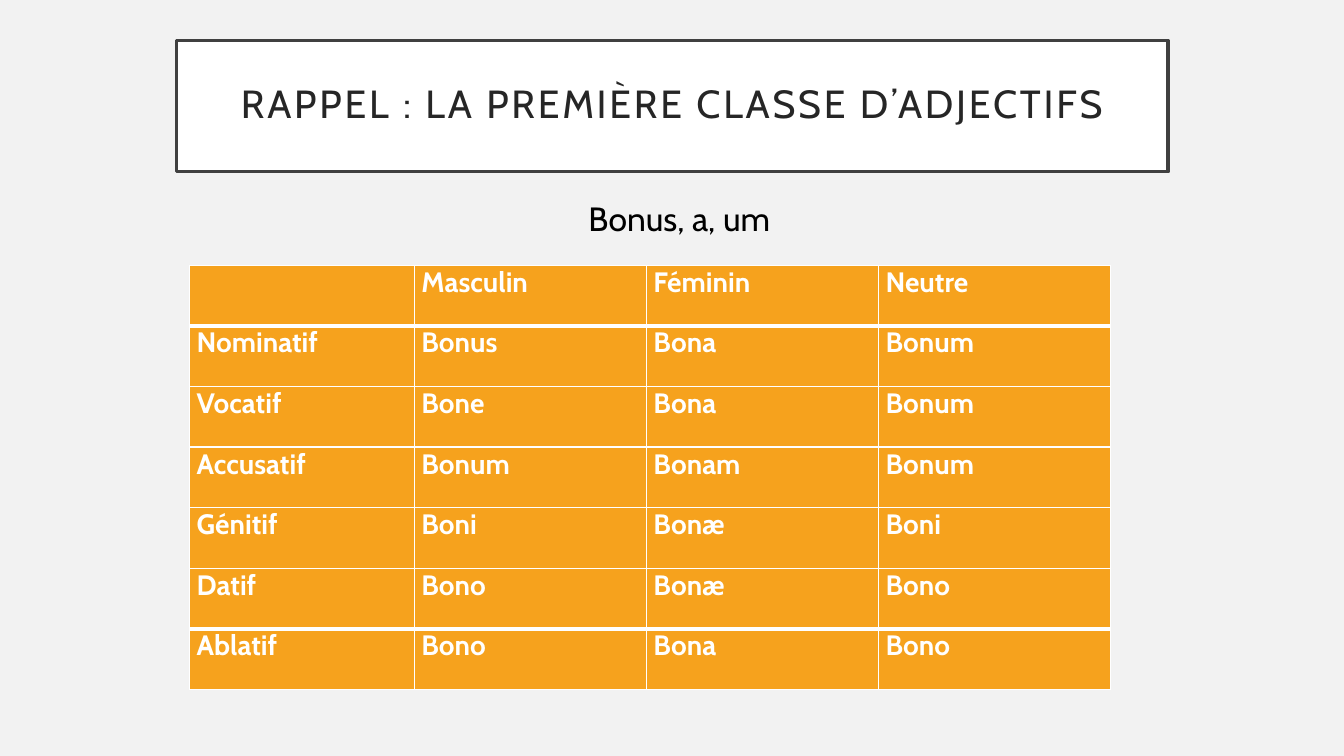
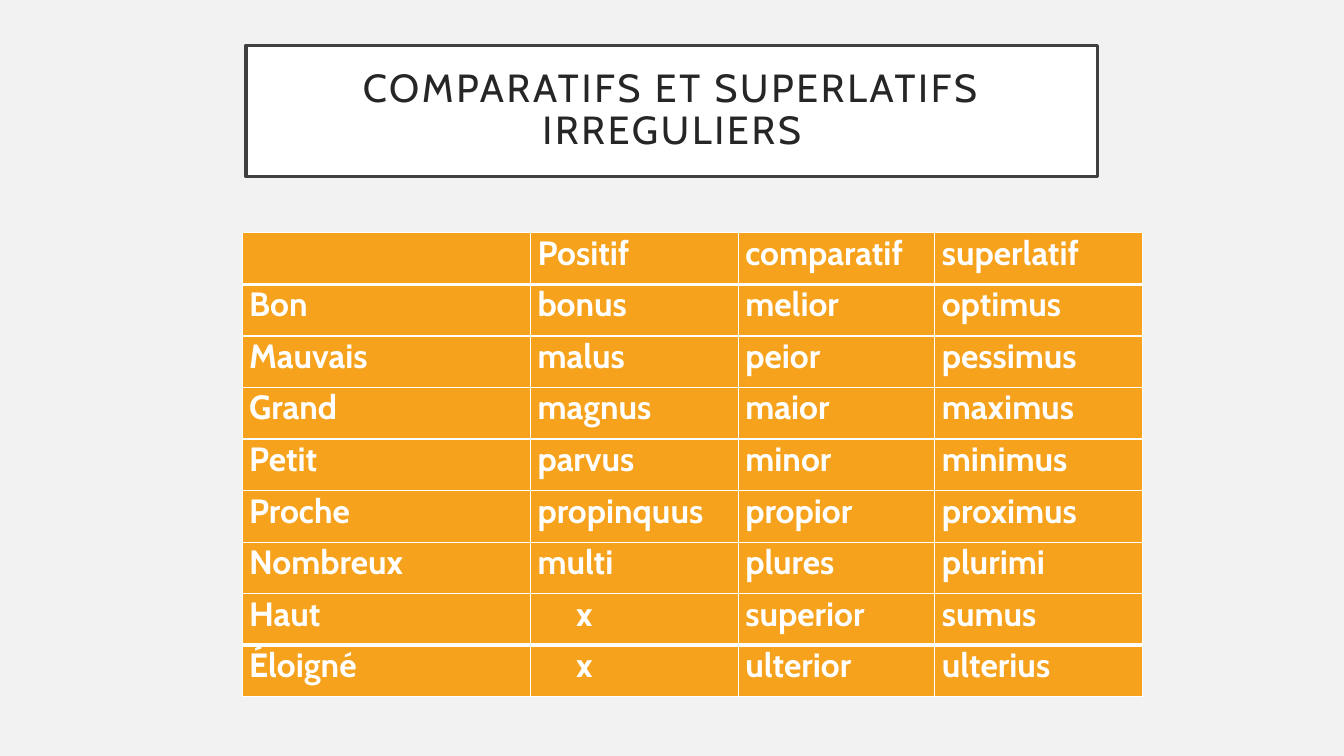
from lxml.etree import SubElement
from pptx import Presentation
from pptx.dml.color import RGBColor
from pptx.enum.text import MSO_ANCHOR, MSO_AUTO_SIZE, PP_ALIGN
from pptx.oxml.ns import qn
from pptx.util import Pt

FONT = "Cabin"
PAGE, WHITE, BLACK = "F2F2F2", "FFFFFF", "000000"
FRAME, TITLE, ORANGE = "404040", "262626", "F6A21D"
CELL_INSET = 5
X_INSET = 32.5

ADJECTIVES = [
    ["", "Masculin", "Féminin", "Neutre"],
    ["Nominatif", "Bonus", "Bona", "Bonum"],
    ["Vocatif", "Bone", "Bona", "Bonum"],
    ["Accusatif", "Bonum", "Bonam", "Bonum"],
    ["Génitif", "Boni", "Bonæ", "Boni"],
    ["Datif", "Bono", "Bonæ", "Bono"],
    ["Ablatif", "Bono", "Bona", "Bono"],
]
IRREGULARS = [
    ["", "Positif", "comparatif", "superlatif"],
    ["Bon", "bonus", "melior", "optimus"],
    ["Mauvais", "malus", "peior", "pessimus"],
    ["Grand", "magnus", "maior", "maximus"],
    ["Petit", "parvus", "minor", "minimus"],
    ["Proche", "propinquus", "propior", "proximus"],
    ["Nombreux", "multi", "plures", "plurimi"],
    ["Haut", "x", "superior", "sumus"],
    ["Éloigné", "x", "ulterior", "ulterius"],
]


def paint(color, value):
    color.rgb = RGBColor.from_string(value)


def fill_with(fill, value):
    fill.solid()
    paint(fill.fore_color, value)


def add_run(p, text, size, color, bold=False):
    r = p.add_run()
    r.text = text
    r.font.name = FONT
    r.font.size = Pt(size)
    r.font.bold = bold
    paint(r.font.color, color)
    return r


def add_title(s, text, box):
    sp = s.shapes.title
    sp.left, sp.top, sp.width, sp.height = map(Pt, box)
    fill_with(sp.fill, WHITE)
    paint(sp.line.color, FRAME)
    sp.line.width = Pt(2.5)
    tf = sp.text_frame
    tf.word_wrap = True
    tf.auto_size = MSO_AUTO_SIZE.NONE
    tf.vertical_anchor = MSO_ANCHOR.MIDDLE
    tf.margin_left = tf.margin_right = tf.margin_top = tf.margin_bottom = Pt(14.4)
    p = tf.paragraphs[0]
    p.alignment = PP_ALIGN.CENTER
    p.line_spacing = 0.9
    r = add_run(p, text, 28, TITLE)
    r.font._element.set("spc", "200")


def add_caption(s, text, box):
    tf = s.shapes.add_textbox(*map(Pt, box)).text_frame
    tf.word_wrap = True
    add_run(tf.paragraphs[0], text, 24, BLACK)


def add_border(cell, side, width):
    ln = SubElement(cell._tc.get_or_add_tcPr(), qn(f"a:ln{side}"), w=str(Pt(width)))
    SubElement(SubElement(ln, qn("a:solidFill")), qn("a:srgbClr"), val=WHITE)


def add_cell(cell, text, size, top, bottom):
    for side, width in (("L", 1), ("R", 1), ("T", top), ("B", bottom)):
        add_border(cell, side, width)
    fill_with(cell.fill, ORANGE)
    cell.margin_left = Pt(X_INSET if text == "x" else CELL_INSET)
    cell.margin_right = Pt(CELL_INSET)
    cell.margin_top = cell.margin_bottom = 0
    if text:
        add_run(cell.text_frame.paragraphs[0], text, size, WHITE, bold=True)


def add_grid(s, rows, left, top, widths, row_height, size):
    last = len(rows) - 1
    frame = s.shapes.add_table(len(rows), len(widths), Pt(left), Pt(top),
                               Pt(sum(widths)), Pt(row_height * len(rows)))
    table = frame.table
    for column, width in zip(table.columns, widths):
        column.width = Pt(width)
    for i, row in enumerate(rows):
        table.rows[i].height = Pt(row_height)
        above = 3 if i in (1, last) else 1
        below = 3 if i in (0, last - 1) else 1
        for j, text in enumerate(row):
            add_cell(table.cell(i, j), text, size, above, below)


def add_slide(prs, title, box):
    s = prs.slides.add_slide(prs.slide_layouts[5])
    add_title(s, title, box)
    return s


def main():
    prs = Presentation()
    prs.slide_width, prs.slide_height = Pt(960), Pt(540)
    fill_with(prs.slide_master.background.fill, PAGE)

    s = add_slide(prs, "RAPPEL : LA PREMIÈRE CLASSE D’ADJECTIFS", (126, 29, 708.5, 93.6))
    add_grid(s, ADJECTIVES, 135.5, 189.5, [160.5] + [165.8] * 3, 43.3, 20)
    add_caption(s, "Bonus, a, um", (413.3, 138.2, 155.5, 36))

    s = add_slide(prs, "COMPARATIFS ET SUPERLATIFS IRREGULIERS", (175.7, 32.4, 608.4, 93.6))
    add_grid(s, IRREGULARS, 173, 166.3, [206, 148.4, 140.4, 148.4], 36.85, 24)

    prs.save("out.pptx")


if __name__ == "__main__":
    main()
